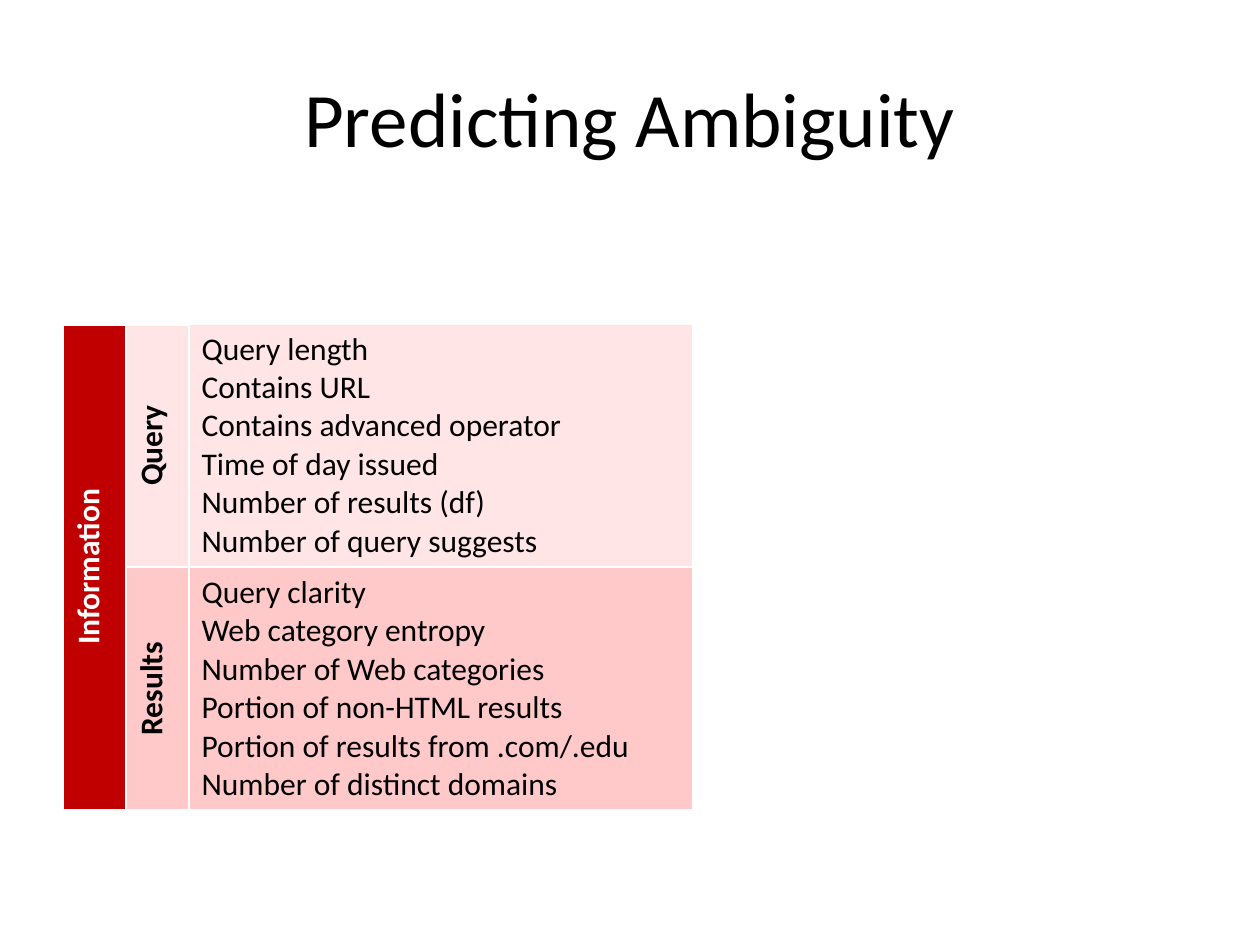
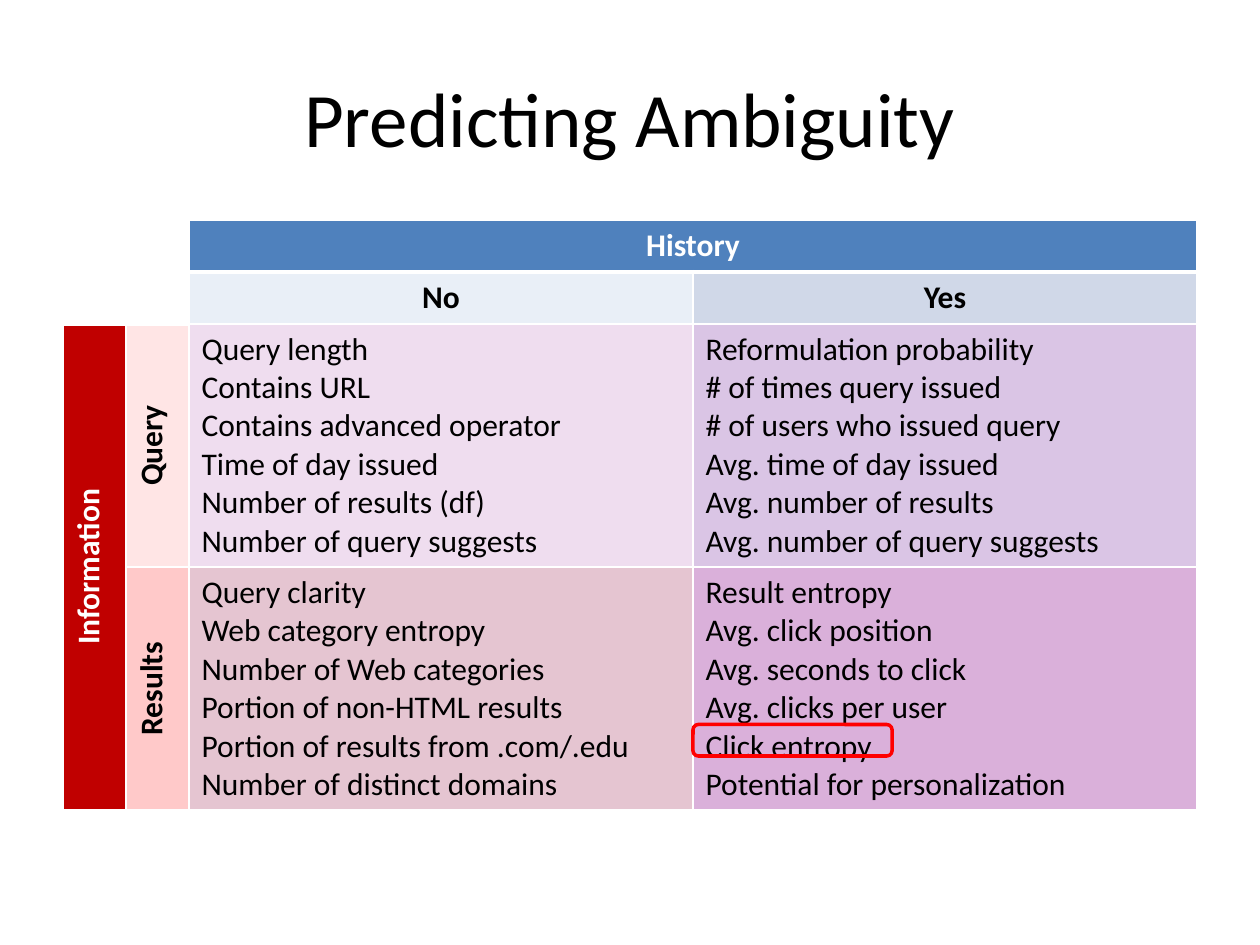
from itertools import product
from lxml.etree import SubElement
from pptx import Presentation
from pptx.dml.color import RGBColor
from pptx.enum.shapes import MSO_SHAPE
from pptx.enum.text import MSO_ANCHOR, PP_ALIGN
from pptx.oxml.ns import qn
from pptx.util import Inches, Pt

FONT = "Calibri"
BLACK, WHITE, RED = "000000", "FFFFFF", "C00000"
QUERY, RESULT = "FFE5E5", "FFC9C9"
COLS = [0.5, 0.5, 4, 4]
ROWS = [0.41, 0.41, 1.93, 1.93]
TITLE_BOX = (0.5, 0.3, 9, 1.25)
GRID_BOX = (0.5, 1.75, sum(COLS), sum(ROWS))

NO_QUERY = [
    "Query length", "Contains URL", "Contains advanced operator",
    "Time of day issued", "Number of results (df)",
    "Number of query suggests",
]
NO_RESULT = [
    "Query clarity", "Web category entropy", "Number of Web categories",
    "Portion of non-HTML results", "Portion of results from .com/.edu",
    "Number of distinct domains",
]
YES_QUERY = [
    "Reformulation probability", "# of times query issued",
    "# of users who issued query", "Avg. time of day issued",
    "Avg. number of results", "Avg. number of query suggests",
]
YES_RESULT = [
    "Result entropy", "Avg. click position", "Avg. seconds to click",
    "Avg. clicks per user", "Click entropy",
    "Potential for personalization",
]


def color(text):
    return RGBColor.from_string(text)


def place(box):
    return [Inches(size) for size in box]


def write(frame, lines, size=18, ink=BLACK, bold=False, align=PP_ALIGN.LEFT):
    for spot, line in enumerate(lines):
        para = frame.add_paragraph() if spot else frame.paragraphs[0]
        para.alignment = align
        run = para.add_run()
        run.text = line
        run.font.name = FONT
        run.font.size = Pt(size)
        run.font.bold = bold
        run.font.color.rgb = color(ink)


def add_title(slide, box, text):
    frame = slide.shapes.add_textbox(*place(box)).text_frame
    frame.word_wrap = True
    frame.vertical_anchor = MSO_ANCHOR.MIDDLE
    write(frame, [text], size=44, align=PP_ALIGN.CENTER)


def add_edges(cell, row, col):
    split = 2 if col < 2 else 1
    top = 3 if row == split else 1
    base = 3 if row + 1 == split else 1
    props = cell._tc.get_or_add_tcPr()
    for side, width in zip("LRTB", (1, 1, top, base)):
        line = SubElement(props, qn(f"a:ln{side}"), w=str(Pt(width)))
        fill = SubElement(line, qn("a:solidFill"))
        SubElement(fill, qn("a:srgbClr"), val=WHITE)


def add_label(cell, text, fill, ink=BLACK, turn=False):
    cell.fill.solid()
    cell.fill.fore_color.rgb = color(fill)
    if turn:
        cell._tc.get_or_add_tcPr().set("vert", "vert270")
    write(cell.text_frame, [text], ink=ink, bold=True, align=PP_ALIGN.CENTER)


def add_list(cell, lines, fill):
    cell.fill.solid()
    cell.fill.fore_color.rgb = color(fill)
    write(cell.text_frame, lines)


def add_grid(slide, box, lists):
    frame = slide.shapes.add_table(len(ROWS), len(COLS), *place(box))
    table = frame.table
    table.first_row = table.horz_banding = False
    for col, width in zip(table.columns, COLS):
        col.width = Inches(width)
    for row, height in zip(table.rows, ROWS):
        row.height = Inches(height)
    for row, col in product(range(len(ROWS)), range(len(COLS))):
        cell = table.cell(row, col)
        add_edges(cell, row, col)
        cell.fill.background()
        write(cell.text_frame, [])
        cell.text_frame.paragraphs[0].font.size = Pt(18)
    for start, end in (((0, 0), (1, 1)), ((0, 2), (0, 3)), ((2, 0), (3, 0))):
        table.cell(*start).merge(table.cell(*end))
    add_label(table.cell(2, 0), "Information", RED, WHITE, turn=True)
    add_label(table.cell(2, 1), "Query", QUERY, turn=True)
    add_label(table.cell(3, 1), "Results", RESULT, turn=True)
    for (row, col), (lines, fill) in lists.items():
        add_list(table.cell(row, col), lines, fill)
    return table


def add_heads(table):
    add_label(table.cell(0, 2), "History", "4F81BD", WHITE)
    add_label(table.cell(1, 2), "No", "E9EFF7")
    add_label(table.cell(1, 3), "Yes", "D0D8E8")


def add_ring(slide, box):
    ring = slide.shapes.add_shape(MSO_SHAPE.ROUNDED_RECTANGLE, *place(box))
    ring.shadow.inherit = False
    ring.fill.background()
    ring.line.color.rgb = color("FF0000")
    ring.line.width = Pt(2)


def add_page(deck, lists):
    slide = deck.slides.add_slide(deck.slide_layouts[6])
    add_title(slide, TITLE_BOX, "Predicting Ambiguity")
    return slide, add_grid(slide, GRID_BOX, lists)


def main():
    deck = Presentation()
    deck.slide_width, deck.slide_height = Inches(10), Inches(7.5)
    add_page(deck, {(2, 2): (NO_QUERY, QUERY), (3, 2): (NO_RESULT, RESULT)})
    slide, table = add_page(deck, {
        (2, 2): (NO_QUERY, "EFDDEF"),
        (2, 3): (YES_QUERY, "DAC5E5"),
        (3, 2): (NO_RESULT, "E5C5D1"),
        (3, 3): (YES_RESULT, "DAB0DA"),
    })
    add_heads(table)
    add_ring(slide, (5.5, 5.75, 1.58, 0.25))
    deck.save("out.pptx")


if __name__ == "__main__":
    main()
